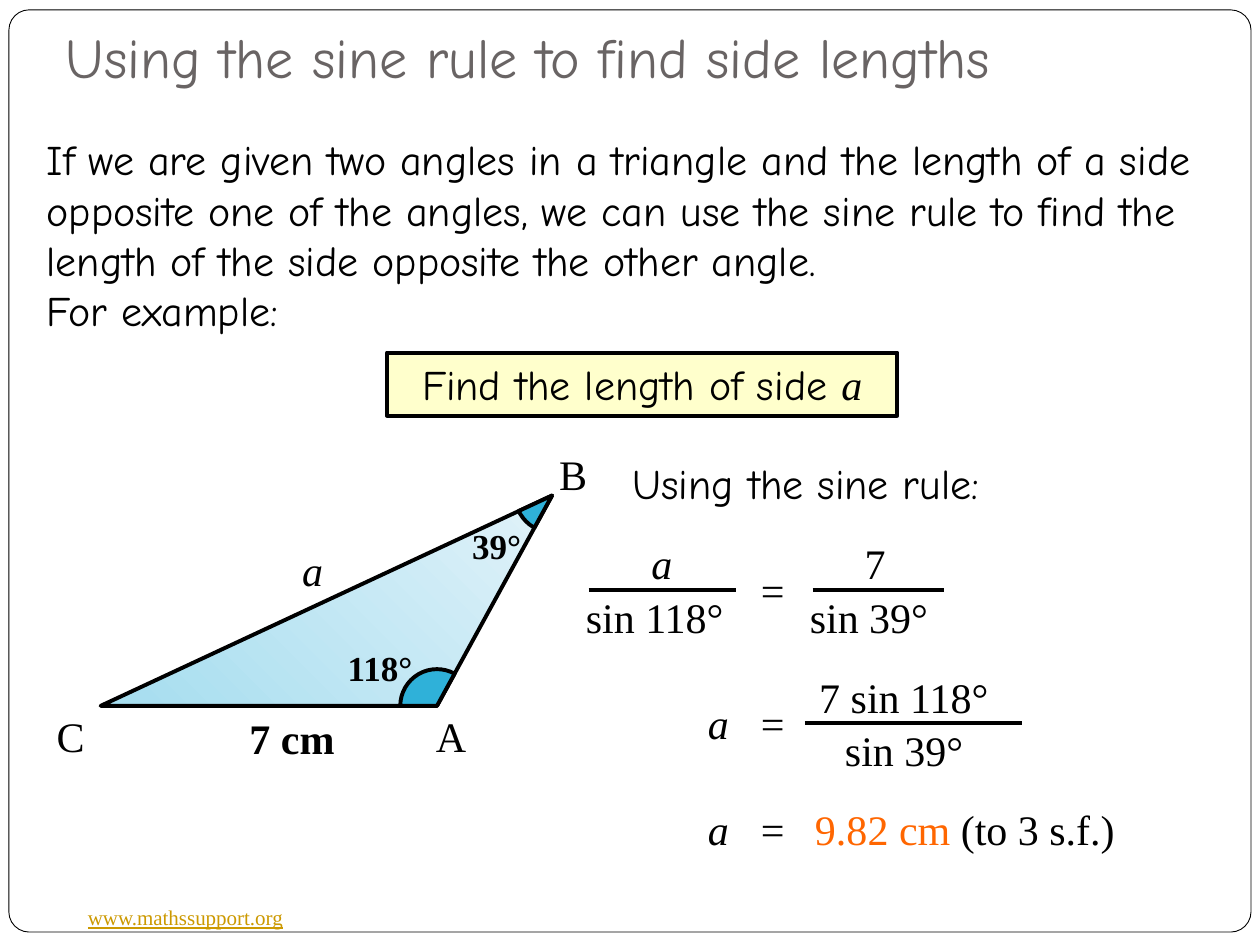
from math import atan2, degrees

from lxml import etree
from pptx import Presentation
from pptx import util as u
from pptx.dml import color
from pptx.enum import shapes, text
from pptx.oxml import ns

HAND, SERIF = "Comic Neue", "Times New Roman"
BLACK = "000000"


def rgb(value):
    return color.RGBColor.from_string(value)


def add_run(p, words, font=SERIF, size=24, col=BLACK, **style):
    r = p.add_run()
    r.text = words
    r.font.name, r.font.size = font, u.Pt(size)
    r.font.color.rgb = rgb(col)
    for name, value in style.items():
        setattr(r.font, name, value)


def add_box(group, x, y, w, h=1.27, wrap=False):
    """Add an empty text box and return its text frame."""
    tf = group.add_textbox(u.Cm(x), u.Cm(y), u.Cm(w), u.Cm(h)).text_frame
    tf.word_wrap = wrap
    tf.auto_size = text.MSO_AUTO_SIZE.SHAPE_TO_FIT_TEXT
    return tf


def add_label(group, words, x, y, w, h=1.27, **style):
    add_run(add_box(group, x, y, w, h).paragraphs[0], words, **style)


def outline(sp, fill, width=2.25):
    """Give a shape a black outline and, if named, a solid fill."""
    sp.shadow.inherit = False
    sp.line.color.rgb = rgb(BLACK)
    sp.line.width = u.Pt(width)
    if fill:
        sp.fill.solid()
        sp.fill.fore_color.rgb = rgb(fill)


def add_shape(group, kind, x, y, w, h, fill, width=2.25):
    sp = group.add_shape(kind, u.Cm(x), u.Cm(y), u.Cm(w), u.Cm(h))
    outline(sp, fill, width)
    return sp


def add_frame(s, x, y, w, h):
    """Page border, behind everything, with the site address at its foot."""
    sp = add_shape(s.shapes, shapes.MSO_SHAPE.ROUNDED_RECTANGLE, x, y, w, h, "FFFFFF", 0.5)
    sp.adjustments[0] = 0.022
    s.shapes.element.insert(2, sp.element)
    add_label(s.shapes, "www.mathssupport.org", x + 1.34, y + 17.91, 4.5, 0.76,
              size=12, col="CC9900", underline=True)


def set_title(s, x, y, w, h, words):
    sp = s.shapes.title
    sp.left, sp.top, sp.width, sp.height = (u.Cm(v) for v in (x, y, w, h))
    tf = sp.text_frame
    tf.auto_size = text.MSO_AUTO_SIZE.NONE
    tf.vertical_anchor = text.MSO_ANCHOR.BOTTOM
    tf.margin_bottom = u.Cm(0.25)
    p = tf.paragraphs[0]
    p.alignment = text.PP_ALIGN.LEFT
    add_run(p, words, HAND, 32, "696464")


def add_intro(s, x, y, w, h):
    tf = add_box(s.shapes, x, y, w, h, wrap=True)
    add_run(tf.paragraphs[0], "If we are given two angles in a triangle and the length of a side "
            "opposite one of the angles, we can use the sine rule to find the length of the "
            "side opposite the other angle.", HAND)
    add_run(tf.add_paragraph(), "For example:", HAND)


def add_task(s, x, y, w, h):
    sp = add_shape(s.shapes, shapes.MSO_SHAPE.RECTANGLE, x, y, w, h, "FFFFCC")
    tf = sp.text_frame
    tf.word_wrap = True
    tf.vertical_anchor = text.MSO_ANCHOR.TOP
    p = tf.paragraphs[0]
    p.alignment = text.PP_ALIGN.CENTER
    add_run(p, "Find the length of side ", HAND)
    add_run(p, "a", italic=True)


def add_triangle(s, x, y):
    group = s.shapes.add_group_shape().shapes
    c, a, b = [(x + dx, y + dy) for dx, dy in ((1.14, 5.31), (7.92, 5.31), (10.24, 1.07))]
    points = [(u.Cm(px), u.Cm(py)) for px, py in (c, a, b)]
    builder = group.build_freeform(*points[0])
    builder.add_line_segments(points[1:], close=True)
    sp = builder.convert_to_shape()
    outline(sp, None)
    sp.fill.gradient()
    sp.fill.gradient_angle = 45
    for stop, col in zip(sp.fill.gradient_stops, ("A5DDEF", "E1F2F9")):
        stop.color.rgb = rgb(col)

    add_angle(group, a, c, b)
    add_angle(group, b, a, c)

    bold, small = {"bold": True}, {"bold": True, "size": 20}
    for words, dx, dy, w, style in (
            ("a", 4.95, 1.93, 0.94, {"italic": True}), ("7 cm", 3.89, 5.31, 2.51, bold),
            ("118°", 5.87, 3.99, 1.83, small), ("39°", 8.38, 1.52, 1.52, small),
            ("A", 7.65, 5.28, 1.14, {}), ("B", 10.13, 0, 1.07, {}), ("C", 0, 5.28, 1.02, {})):
        add_label(group, words, x + dx, y + dy, w, **style)


def add_angle(group, vertex, start, end, radius=0.74):
    """Mark the angle at vertex, clockwise from start to end."""
    vx, vy = vertex
    sp = add_shape(group, shapes.MSO_SHAPE.PIE, vx - radius, vy - radius,
                   2 * radius, 2 * radius, "2FB1D9")
    for i, (px, py) in enumerate((start, end)):
        # Angles are stored in 60000ths of a degree, adjustments in 100000ths.
        sp.adjustments[i] = degrees(atan2(py - vy, px - vx)) % 360 * 0.6


def add_fraction(group, centre, top, bar, numerator, denominator):
    """Stack two (words, width, style) parts about a bar."""
    for (words, w, style), dy in ((numerator, 0), (denominator, 1.07)):
        add_label(group, words, centre - w / 2, top + dy, w, **style)
    y = u.Cm(top + 1.17)
    line = group.add_connector(shapes.MSO_CONNECTOR.STRAIGHT, u.Cm(centre - bar / 2), y,
                               u.Cm(centre + bar / 2), y)
    line.line.color.rgb = rgb(BLACK)
    line.line.width = u.Pt(2.25)
    etree.SubElement(line.element.spPr, ns.qn("a:effectLst"))


def add_working(s, x, y):
    add_label(s.shapes, "Using the sine rule:", x + 0.94, y, 8.2, font=HAND)
    a_x, equals_x = x + 2.46, x + 3.53
    italic = {"italic": True}
    sin_39 = ("sin 39°", 3.25, {})

    top = y + 1.63
    group = s.shapes.add_group_shape().shapes
    add_fraction(group, x + 1.79, top, 2.97, ("a", 0.94, italic), ("sin 118°", 3.58, {}))
    add_label(group, "=", equals_x, top + 0.53, 0.94)
    add_fraction(group, x + 6.14, top, 2.64, ("7", 1.04, {}), sin_39)

    top = y + 4.32
    group = s.shapes.add_group_shape().shapes
    add_label(group, "a", a_x, top + 0.53, 0.94, **italic)
    add_label(group, "=", equals_x, top + 0.53, 0.94)
    add_fraction(group, x + 6.85, top, 4.37, ("7 sin 118°", 4.29, {}), sin_39)

    p = add_box(s.shapes, a_x, y + 6.99, 10.06, wrap=True).paragraphs[0]
    tabs = etree.SubElement(p._p.get_or_add_pPr(), ns.qn("a:tabLst"))
    for pos in (1.07, 2.16):
        etree.SubElement(tabs, ns.qn("a:tab"), pos=str(u.Cm(pos)), algn="l")
    add_run(p, "a", italic=True)
    add_run(p, "\t=\t")
    add_run(p, "9.82 cm", col="FF6600")
    add_run(p, " (to 3 s.f.)")


def main():
    prs = Presentation()
    prs.slide_width, prs.slide_height = u.Cm(25.4), u.Cm(19.05)
    s = prs.slides.add_slide(prs.slide_layouts[5])
    add_frame(s, 0.18, 0.2, 25.04, 18.59)
    set_title(s, 1.07, 0.46, 22.86, 1.6, "Using the sine rule to find side lengths")
    add_intro(s, 0.69, 2.57, 24.18, 4.37)
    add_task(s, 7.8, 7.11, 10.29, 1.27)
    add_working(s, 11.56, 9.09)
    add_triangle(s, 0.89, 8.92)
    prs.save("out.pptx")


if __name__ == "__main__":
    main()
